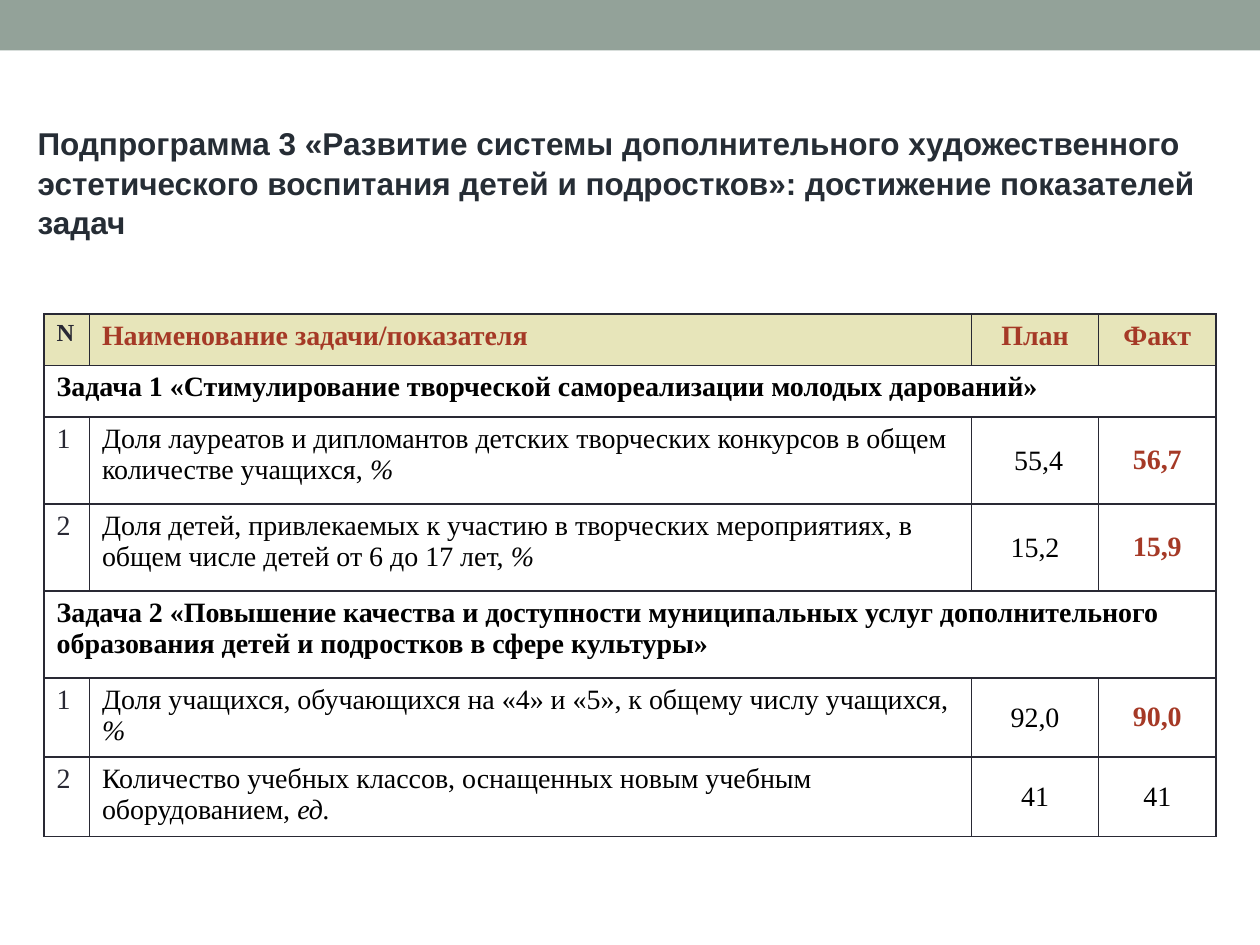
from lxml import etree
from pptx import Presentation
from pptx.dml.color import RGBColor
from pptx.enum.shapes import MSO_SHAPE
from pptx.enum.text import MSO_ANCHOR, PP_ALIGN
from pptx.oxml.ns import qn
from pptx.util import Inches, Pt

RECT = MSO_SHAPE.RECTANGLE
LEFT, CENTER = PP_ALIGN.LEFT, PP_ALIGN.CENTER
TOP, MIDDLE = MSO_ANCHOR.TOP, MSO_ANCHOR.MIDDLE

SAGE, SAND, RED = "93A299", "E7E5BA", "A53926"
INK, SLATE, BLACK = "292934", "262D35", "000000"

TITLE = ("Подпрограмма 3 «Развитие системы дополнительного художественного "
         "эстетического воспитания детей и подростков»: достижение показателей задач")
COLS = [0.36, 7, 1.01, 0.93]
HEAD = ["N", "Наименование задачи/показателя", "План", "Факт"]
# A task is (height, title); a measure is (height, number, name, unit, plan, fact, fact colour).
ROWS = [
    (0.41, "Задача 1 «Стимулирование творческой самореализации молодых дарований»"),
    (0.69, "1", "Доля лауреатов и дипломантов детских творческих конкурсов "
     "в общем количестве учащихся, ", "%", " 55,4", "56,7", RED),
    (0.69, "2", "Доля детей, привлекаемых к участию в творческих мероприятиях, "
     "в общем числе детей от 6 до 17 лет, ", "%", "15,2", "15,9", RED),
    (0.69, "Задача 2 «Повышение качества и доступности муниципальных услуг "
     "дополнительного образования детей и подростков в сфере культуры»"),
    (0.63, "1", "Доля учащихся, обучающихся на «4» и «5», к общему числу учащихся, ",
     "%", "92,0", "90,0", RED),
    (0.63, "2", "Количество учебных классов, оснащенных новым учебным оборудованием, ",
     "ед.", "41", "41", BLACK),
]


def color(text):
    return RGBColor.from_string(text)


class Deck:
    def __init__(self):
        self.show = Presentation()
        self.show.slide_width, self.show.slide_height = Inches(10), Inches(7.5)
        self.slide = self.show.slides.add_slide(self.show.slide_layouts[6])
        self.serif, self.sans = "Times New Roman", "Arial"

    def style(self, para, name, size, tint, bold=False, align=LEFT):
        font = para.font
        font.name, font.size, font.bold = name, Pt(size), bold
        font.color.rgb = color(tint)
        para.alignment = align

    def bar(self, x, y, w, h, tint):
        shape = self.slide.shapes.add_shape(RECT, Inches(x), Inches(y), Inches(w), Inches(h))
        shape.shadow.inherit = False
        shape.fill.solid()
        shape.fill.fore_color.rgb = color(tint)
        shape.line.fill.background()

    def title(self, x, y, w, h, text):
        frame = self.slide.shapes.add_textbox(
            Inches(x), Inches(y), Inches(w), Inches(h)).text_frame
        frame.word_wrap = True
        para = frame.paragraphs[0]
        para.text = text
        para.line_spacing = 1.05
        self.style(para, self.sans, 18, SLATE, True)

    def table(self, x, y, cols, rows):
        grid = self.slide.shapes.add_table(
            len(rows), len(cols), Inches(x), Inches(y),
            Inches(sum(cols)), Inches(sum(rows))).table
        for col, wide in zip(grid.columns, cols):
            col.width = Inches(wide)
        for row, high in zip(grid.rows, rows):
            row.height = Inches(high)
        for cell in grid.iter_cells():
            self.border(cell)
            cell.fill.background()
        return grid

    def border(self, cell):
        props = cell._tc.get_or_add_tcPr()
        for side in ("lnL", "lnR", "lnT", "lnB"):
            line = etree.SubElement(props, qn("a:" + side), w=str(Pt(1)))
            fill = etree.SubElement(line, qn("a:solidFill"))
            etree.SubElement(fill, qn("a:srgbClr"), val=INK)

    def cell(self, cell, text, tint=BLACK, size=16, bold=False, align=LEFT,
             anchor=TOP, unit="", fill=None):
        para = cell.text_frame.paragraphs[0]
        para.add_run().text = text
        if unit:
            run = para.add_run()
            run.text = unit
            run.font.italic = True
        self.style(para, self.serif, size, tint, bold, align)
        cell.vertical_anchor = anchor
        if fill:
            cell.fill.solid()
            cell.fill.fore_color.rgb = color(fill)


def main():
    deck = Deck()
    deck.bar(0, 0, 10, 0.4, SAGE)
    grid = deck.table(0.35, 2.49, COLS, [0.41] + [row[0] for row in ROWS])

    for c, text in enumerate(HEAD):
        deck.cell(grid.cell(0, c), text, RED if c else INK, 16 if c else 14, True,
                  CENTER if c > 1 else LEFT, fill=SAND)

    for r, (_, *data) in enumerate(ROWS, 1):
        cells = [grid.cell(r, c) for c in range(len(COLS))]
        if len(data) == 1:
            cells[0].merge(cells[-1])
            deck.cell(cells[0], data[0], bold=True)
            continue
        num, name, unit, plan, fact, tint = data
        deck.cell(cells[0], num, INK)
        deck.cell(cells[1], name, unit=unit)
        deck.cell(cells[2], plan, align=CENTER, anchor=MIDDLE)
        cells[2].margin_left = cells[2].margin_right = cells[2].margin_top = Inches(0.01)
        cells[2].margin_bottom = 0
        deck.cell(cells[3], fact, tint, bold=tint == RED, align=CENTER, anchor=MIDDLE)

    deck.title(0.2, 0.92, 9.61, 1.01, TITLE)
    deck.show.save("out.pptx")


if __name__ == "__main__":
    main()
